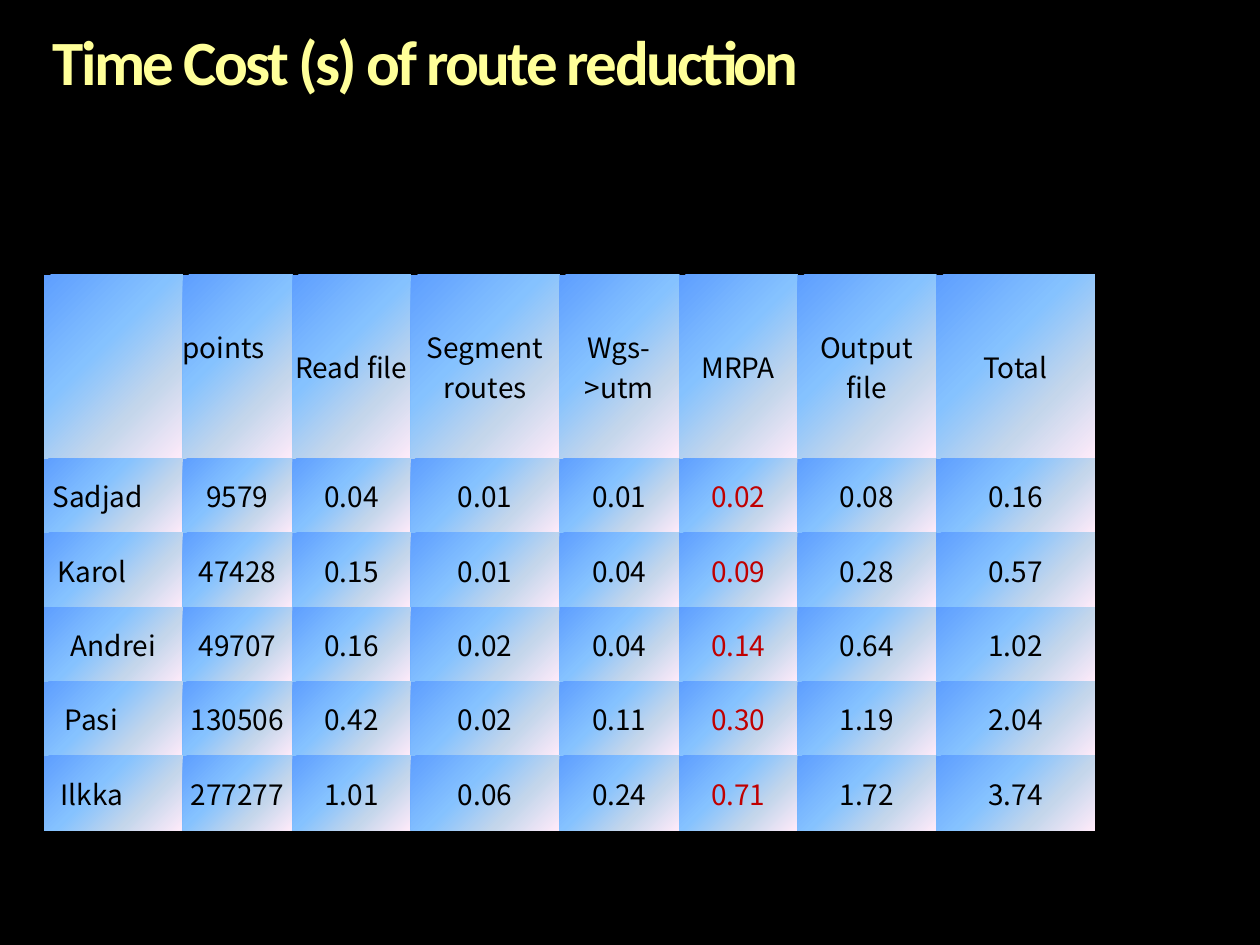
import pptx
import pptx.util
import pptx.dml.color
import pptx.enum.text
import pptx.oxml.ns
import lxml.etree

PLAIN = "{2D5ABB26-0587-4C30-8999-92F81FD0307C}"
SHADES = [(0, "5E9EFF"), (40, "85C2FF"), (70, "C4D6EB"), (100, "FFEBFA")]
WIDTHS = [11, 8.7, 9.4, 11.8, 9.5, 9.4, 11, 12.6]
HEIGHTS = [14.6] + [5.9] * 5
HEADS = ["", "points", "Read file", "Segment\nroutes", "Wgs->utm", "MRPA",
         "Output\nfile", "Total"]
COSTS = [
    ["Sadjad", "9579", "0.04", "0.01", "0.01", "0.02", "0.08", "0.16"],
    ["Karol", "47428", "0.15", "0.01", "0.04", "0.09", "0.28", "0.57"],
    ["Andrei", "49707", "0.16", "0.02", "0.04", "0.14", "0.64", "1.02"],
    ["Pasi", "130506", "0.42", "0.02", "0.11", "0.30", "1.19", "2.04"],
    ["Ilkka", "277277", "1.01", "0.06", "0.24", "0.71", "1.72", "3.74"],
]
INSETS = [2.5, 3.4, 0, 3.5, 3.4]
MRPA = HEADS.index("MRPA")


def hue(code):
    return pptx.dml.color.RGBColor.from_string(code)


class Deck:
    cols, rows = 100, 75

    def __init__(self):
        self.file = pptx.Presentation()
        self.file.slide_width = pptx.util.Inches(10)
        self.file.slide_height = pptx.util.Inches(7.5)
        self.slide = self.file.slides.add_slide(self.file.slide_layouts[5])
        back = self.slide.background.fill
        back.solid()
        back.fore_color.rgb = hue("000000")

    def wide(self, count):
        return round(self.file.slide_width * count / self.cols)

    def high(self, count):
        return round(self.file.slide_height * count / self.rows)

    def font(self, para, name, size, color):
        para.font.name = name
        para.font.size = pptx.util.Pt(size)
        para.font.color.rgb = hue(color)

    def title(self, text, left, top, width, height):
        box = self.slide.shapes.title
        box.left, box.top = self.wide(left), self.high(top)
        box.width, box.height = self.wide(width), self.high(height)
        frame = box.text_frame
        frame.text = text
        frame.word_wrap = True
        frame.vertical_anchor = pptx.enum.text.MSO_ANCHOR.TOP
        frame.margin_left = frame.margin_right = 0
        frame.margin_top = frame.margin_bottom = 0
        para = frame.paragraphs[0]
        para.alignment = pptx.enum.text.PP_ALIGN.LEFT
        para.line_spacing = 0.9
        self.font(para, "Calibri", 36, "FFFF99")
        para.font.bold = True
        para.font._element.set("spc", "-150")

    def table(self, data, left, top, widths, heights):
        shape = self.slide.shapes.add_table(
            len(data), len(data[0]), self.wide(left), self.high(top),
            self.wide(sum(widths)), self.high(sum(heights)))
        grid = shape.table
        grid.first_row = grid.horz_banding = False
        style = grid._tbl.tblPr.find(pptx.oxml.ns.qn("a:tableStyleId"))
        style.text = PLAIN
        for col, width in zip(grid.columns, widths):
            col.width = self.wide(width)
        for row, height in zip(grid.rows, heights):
            row.height = self.high(height)
        for i, line in enumerate(data):
            for j, text in enumerate(line):
                color = "C00000" if i and j == MRPA else "000000"
                self.cell(grid.cell(i, j), text, color)
        return grid

    def cell(self, cell, text, color):
        cell.text = text
        cell.vertical_anchor = pptx.enum.text.MSO_ANCHOR.MIDDLE
        cell.margin_left = cell.margin_right = 0
        cell.margin_top = cell.margin_bottom = 0
        for para in cell.text_frame.paragraphs:
            para.alignment = pptx.enum.text.PP_ALIGN.CENTER
            self.font(para, "Noto Sans CJK SC", 16, color)
        self.shade(cell)

    def shade(self, cell):
        qn = pptx.oxml.ns.qn
        cell.fill.gradient()
        cell.fill.gradient_angle = 315
        stops = cell._tc.tcPr.find(".//" + qn("a:gsLst"))
        for stop in list(stops):
            stops.remove(stop)
        for place, color in SHADES:
            stop = lxml.etree.SubElement(stops, qn("a:gs"), pos=str(place * 1000))
            lxml.etree.SubElement(stop, qn("a:srgbClr"), val=color)


def main():
    deck = Deck()
    deck.title("Time Cost (s) of route reduction", 4.2, 2.5, 91.7, 12.7)
    grid = deck.table([HEADS] + COSTS, 3.5, 21.8, WIDTHS, HEIGHTS)
    for row, inset in enumerate(INSETS, 1):
        grid.cell(row, 0).margin_right = deck.wide(inset)
    points = grid.cell(0, 1)
    points.margin_bottom = deck.high(3.2)
    points.text_frame.paragraphs[0].alignment = pptx.enum.text.PP_ALIGN.LEFT
    deck.file.save("out.pptx")


if __name__ == "__main__":
    main()
